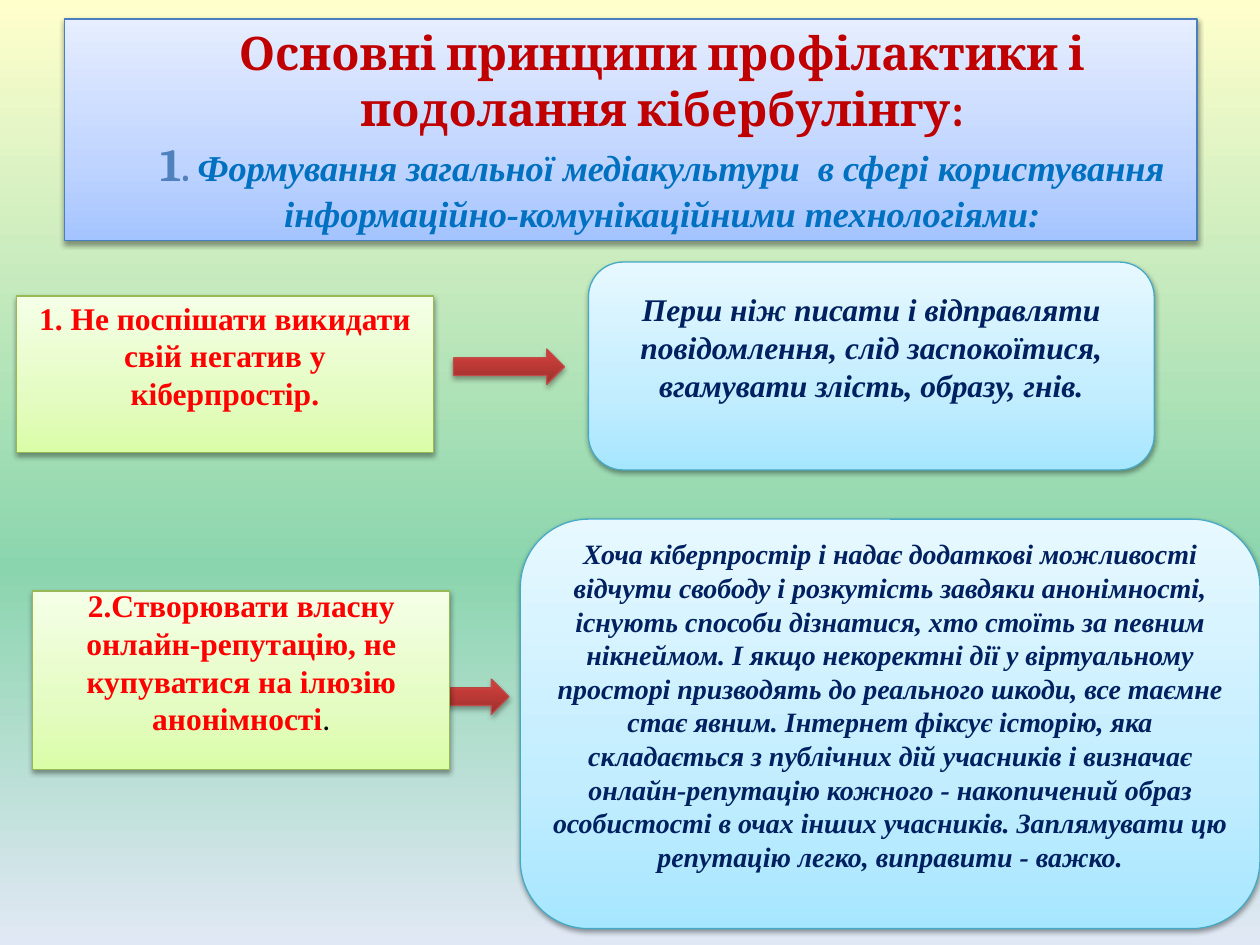
from pptx import Presentation
from pptx.dml.color import RGBColor
from pptx.enum.shapes import MSO_SHAPE as Kind
from pptx.enum.text import MSO_ANCHOR as Anchor, MSO_AUTO_SIZE as Fit, PP_ALIGN as Align
from pptx.oxml import parse_xml
from pptx.oxml.ns import nsdecls, qn
from pptx.util import Inches, Pt

TIMES = "Times New Roman"
BLUE = {"stops": [(0, "A4C4FF"), (35, "BFD4FF"), (100, "E6EEFF")], "edge": "4B7EBC"}
LIME = {"stops": [(0, "DAFDA7"), (35, "E4FCC2"), (100, "F5FFE7")], "edge": "98B955"}
AQUA = {"stops": [(0, "A7E6FF"), (35, "C1EDFF"), (100, "E7F8FF")], "edge": "46AAC5"}
RED = {"stops": [(0, "9C2F2D"), (80, "CB3E3A"), (100, "CE3B37")], "edge": "BF4C48",
       "dim": 35, "drop": 1.8}

HEAD = {"size": Pt(26.4), "name": "Cambria", "bold": True}
RULE = {"size": Pt(20.8), "name": TIMES, "bold": True, "italic": True}
STEP = {"size": Pt(18), "name": TIMES, "bold": True}
NOTE = {**STEP, "italic": True}

ROWS = [
    {"step": "1. Не поспішати викидати свій негатив у кіберпростір.",
     "note": "Перш ніж писати і відправляти повідомлення, слід заспокоїтися, "
             "вгамувати злість, образу, гнів.",
     "size": 18, "left": (0.13, 2.35, 3.31, 1.24), "arrow": (3.6, 2.77, 0.88, 0.28),
     "right": (4.67, 2.08, 4.49, 1.65)},
    {"step": "2.Створювати власну онлайн-репутацію, не купуватися на ілюзію анонімності",
     "end": ".",
     "note": "Хоча кіберпростір і надає додаткові можливості відчути свободу і "
             "розкутість завдяки анонімності, існують способи дізнатися, хто стоїть "
             "за певним нікнеймом. І якщо некоректні дії у віртуальному просторі "
             "призводять до реального шкоди, все таємне стає явним. Інтернет фіксує "
             "історію, яка складається з публічних дій учасників і визначає "
             "онлайн-репутацію кожного - накопичений образ особистості в очах інших "
             "учасників. Заплямувати цю репутацію легко, виправити - важко.",
     "size": 16, "left": (0.26, 4.69, 3.31, 1.42), "arrow": (3.16, 5.39, 0.88, 0.28),
     "right": (4.13, 4.12, 5.87, 3.25)},
]


def paint(color, code):
    """Set a colour from a hex string."""
    color.rgb = RGBColor.from_string(code)


def blend(fill, root, stops, angle):
    """Fill with a linear gradient of the given stops."""
    fill.gradient()
    fill.gradient_angle = angle
    group = root.find(".//" + qn("a:gsLst"))
    for stop in list(group):
        group.remove(stop)
    for place, code in stops:
        group.append(parse_xml(
            f'<a:gs {nsdecls("a")} pos="{place * 1000}"><a:srgbClr val="{code}"/></a:gs>'))


def style(shape, stops, edge, dim=38, drop=1.6):
    """Give a shape its gradient, outline and soft shadow."""
    blend(shape.fill, shape._element, stops, 90)
    paint(shape.line.color, edge)
    shape.line.width = Pt(0.75)
    shape.shadow.inherit = False
    shape._element.spPr.find(qn("a:effectLst")).append(parse_xml(
        f'<a:outerShdw {nsdecls("a")} blurRad="{Pt(3.1)}" dist="{Pt(drop)}" dir="5400000" '
        f'rotWithShape="0"><a:srgbClr val="000000"><a:alpha val="{dim * 1000}"/>'
        '</a:srgbClr></a:outerShdw>'))


def write(par, text, code, form):
    """Add a run with the given format values."""
    run = par.add_run()
    run.text = text
    for key, value in form.items():
        setattr(run.font, key, value)
    paint(run.font.color, code)


def setup(shape, foot):
    """Prepare centred text and return its first paragraph."""
    frame = shape.text_frame
    values = {"word_wrap": True, "auto_size": Fit.NONE, "vertical_anchor": Anchor.MIDDLE,
              "margin_left": Inches(0.1), "margin_right": Inches(0.1),
              "margin_top": Inches(0.05), "margin_bottom": Inches(foot)}
    for key, value in values.items():
        setattr(frame, key, value)
    par = frame.paragraphs[0]
    par.alignment = Align.CENTER
    return par


def block(slide, kind, box, look):
    """Add a styled preset shape in the box."""
    shape = slide.shapes.add_shape(kind, *map(Inches, box))
    style(shape, **look)
    return shape


def title(slide, box):
    """Fill the title placeholder with the heading and its first rule."""
    shape = slide.shapes.title
    for key, value in zip(("left", "top", "width", "height"), box):
        setattr(shape, key, Inches(value))
    style(shape, **BLUE)
    par = setup(shape, 0.05)
    props = par._p.get_or_add_pPr()
    props.set("marL", str(Inches(0.5)))
    props.set("indent", "0")
    write(par, "Основні принципи профілактики і подолання кібербулінгу:", "C00000", HEAD)
    par.add_line_break()
    write(par, "1", "4F81BD", HEAD)
    write(par, ". ", "4F81BD", {**HEAD, "size": RULE["size"]})
    write(par, "Формування загальної медіакультури  в сфері користування "
               "інформаційно-комунікаційними технологіями:", "0070C0", RULE)


def pair(slide, row):
    """Place one principle, its arrow and its explanation."""
    block(slide, Kind.RIGHT_ARROW, row["arrow"], RED)
    par = setup(block(slide, Kind.RECTANGLE, row["left"], LIME), 0.35)
    write(par, row["step"], "FF0000", STEP)
    if "end" in row:
        write(par, row["end"], "000000", {"size": Pt(18), "name": "Calibri"})
    par = setup(block(slide, Kind.ROUNDED_RECTANGLE, row["right"], AQUA), 0.35)
    write(par, row["note"], "002060", {**NOTE, "size": Pt(row["size"])})


def main():
    """Build and save the slide."""
    deck = Presentation()
    deck.slide_width, deck.slide_height = Inches(10), Inches(7.5)
    slide = deck.slides.add_slide(deck.slide_layouts[5])
    blend(slide.background.fill, slide._element,
          [(0, "FFFFCC"), (60, "8BD5AE"), (100, "E1E8F5")], 270)
    title(slide, (0.51, 0.15, 8.99, 1.76))
    for row in ROWS:
        pair(slide, row)
    deck.save("out.pptx")


if __name__ == "__main__":
    main()
